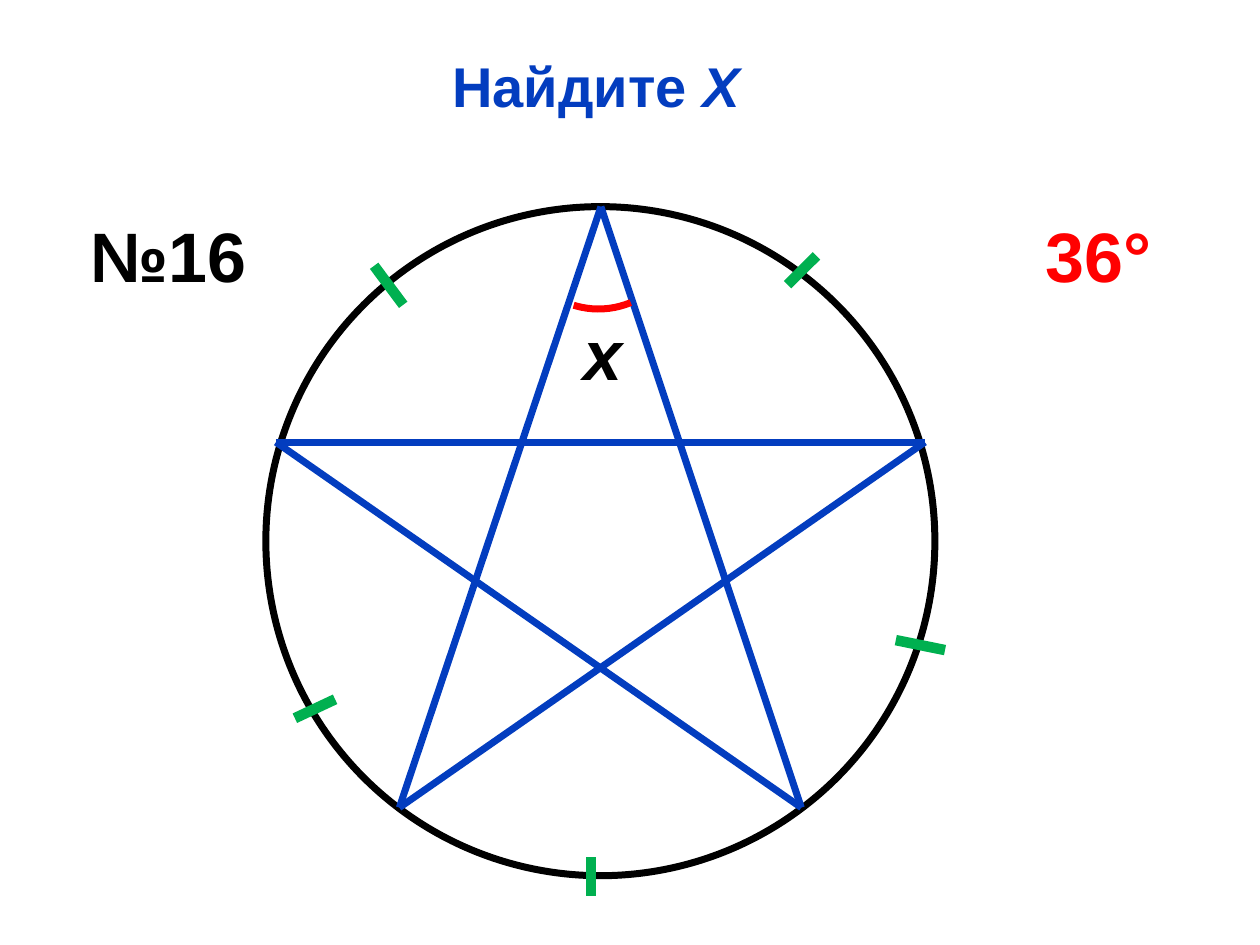
from lxml.etree import SubElement
from pptx import Presentation
from pptx.dml.color import RGBColor
from pptx.enum.shapes import MSO_CONNECTOR, MSO_SHAPE
from pptx.enum.text import MSO_AUTO_SIZE, PP_ALIGN
from pptx.oxml.ns import qn
from pptx.util import Pt

COLORS = {
    "blue": "033DBF",
    "black": "000000",
    "white": "FFFFFF",
    "green": "00B050",
    "red": "FF0000",
}
HUES = {name: RGBColor.from_string(code) for name, code in COLORS.items()}

deck = Presentation()
deck.slide_width, deck.slide_height = Pt(720), Pt(540)
slide = deck.slides.add_slide(deck.slide_layouts[6])
shapes = slide.shapes


def add_text(parts, left, top, width, height, size, hue):
    box = shapes.add_textbox(Pt(left), Pt(top), Pt(width), Pt(height))
    frame = box.text_frame
    frame.word_wrap = True
    frame.auto_size = MSO_AUTO_SIZE.SHAPE_TO_FIT_TEXT
    para = frame.paragraphs[0]
    for text, slant in parts:
        run = para.add_run()
        run.text = text
        if slant:
            run.font.italic = True
    font = para.font
    font.name, font.size, font.bold = "Arial", Pt(size), True
    font.color.rgb = HUES[hue]
    return para


def add_line(start, end, hue, width):
    ends = [Pt(v) for v in (*start, *end)]
    line = shapes.add_connector(MSO_CONNECTOR.STRAIGHT, *ends)
    line.line.color.rgb = HUES[hue]
    line.line.width = Pt(width)
    SubElement(line._element.spPr, qn("a:effectLst"))


# Title
title = add_text([("Найдите ", False), ("Х", True)],
                 14.4, 25.9, 652.3, 45.4, 32, "blue")
title.alignment = PP_ALIGN.CENTER

# Circle
ring = shapes.add_shape(MSO_SHAPE.OVAL, Pt(151.9), Pt(118.1), Pt(382.3), Pt(382.3))
ring.shadow.inherit = False
ring.fill.solid()
ring.fill.fore_color.rgb = HUES["white"]
ring.line.color.rgb = HUES["black"]
ring.line.width = Pt(4)

# Star
peak = (343.4, 118.1)
west, east = (157.7, 252.7), (528.5, 252.7)
foot_w, foot_e = (228.2, 461.5), (457.9, 461.5)
star = [(foot_w, peak), (foot_e, peak), (west, east), (foot_w, east), (west, foot_e)]
for start, end in star:
    add_line(start, end, "blue", 4)

# Marks of equal arcs
marks = [
    ((168.5, 410.4), (191.5, 399.6)),
    ((213.8, 151.9), (230.4, 174.2)),
    ((450, 162.7), (466.6, 146.2)),
    ((511.9, 365.8), (540, 371.5)),
    ((337.7, 511.9), (337.7, 489.6)),
]
for start, end in marks:
    add_line(start, end, "green", 6)

# Angle at the peak
arc = shapes.add_shape(MSO_SHAPE.ARC, Pt(295.9), Pt(80.6), Pt(94.3), Pt(96.5))
arc.adjustments[0], arc.adjustments[1] = 15.653, 39.657
arc.rotation = 42.4
arc.shadow.inherit = False
arc.fill.background()
arc.line.color.rgb = HUES["red"]
arc.line.width = Pt(4)

# Labels
add_text([("x", True)], 326.2, 174.2, 33.8, 55.4, 40, "black")
add_text([("№16", False)], 44.6, 118.1, 123.8, 55.4, 40, "black")
add_text([("36°", False)], 590.4, 118.1, 101.5, 55.4, 40, "red")

deck.save("out.pptx")
